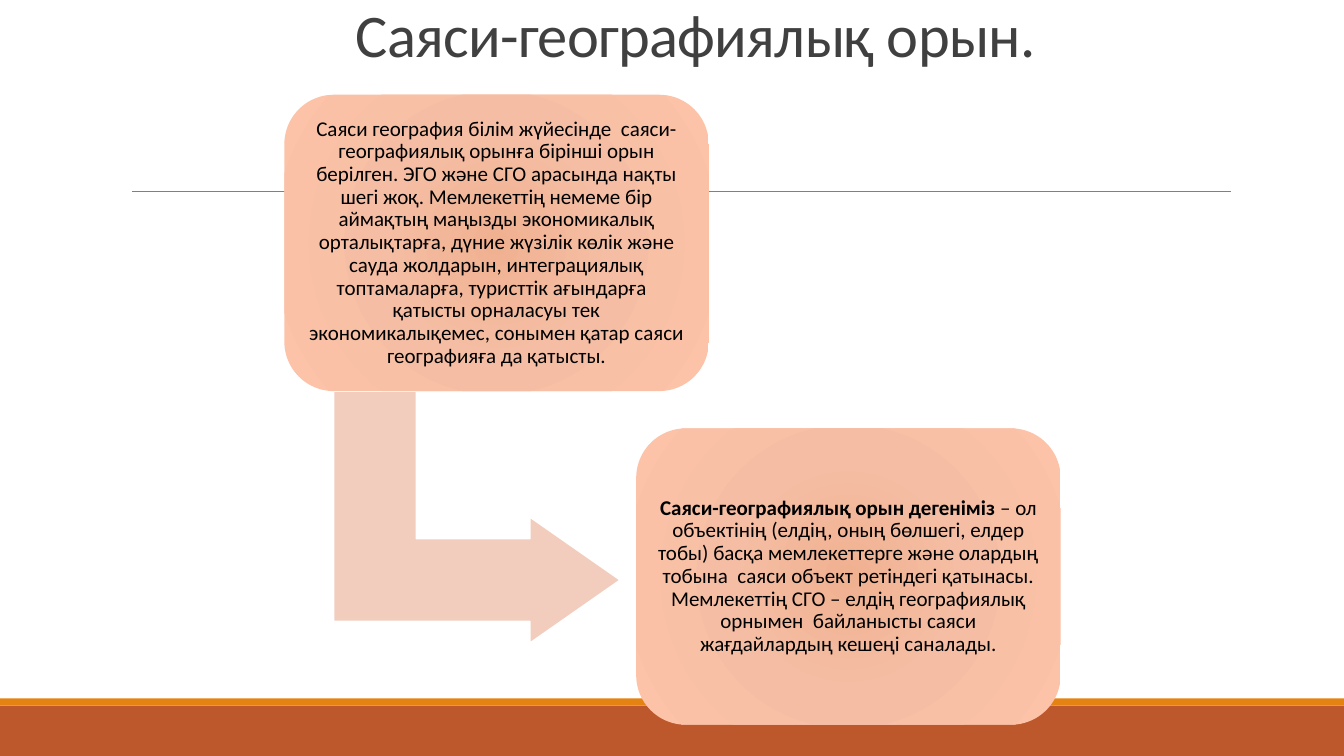
from pptx import Presentation
from pptx.dml.color import RGBColor
from pptx.enum.shapes import MSO_CONNECTOR, MSO_SHAPE
from pptx.enum.text import MSO_ANCHOR, PP_ALIGN
from pptx.oxml import parse_xml
from pptx.oxml.ns import nsdecls
from pptx.util import Inches, Pt

RECT, ROUNDED, BENT_ARROW = MSO_SHAPE.RECTANGLE, MSO_SHAPE.ROUNDED_RECTANGLE, MSO_SHAPE.BENT_UP_ARROW
STRAIGHT = MSO_CONNECTOR.STRAIGHT
CENTER, MIDDLE, BOTTOM = PP_ALIGN.CENTER, MSO_ANCHOR.MIDDLE, MSO_ANCHOR.BOTTOM

RUST = RGBColor(0xBD, 0x58, 0x2C)
ORANGE = RGBColor(0xE4, 0x83, 0x12)
GREY = RGBColor(0x80, 0x80, 0x80)
DARK = RGBColor(0x40, 0x40, 0x40)
PEACH = RGBColor(0xF2, 0xCD, 0xBD)
WHITE = RGBColor(0xFF, 0xFF, 0xFF)
BLACK = RGBColor(0x00, 0x00, 0x00)
CARD_STOPS = [(0, RGBColor(0xF0, 0xB1, 0x91)), (45, RGBColor(0xF5, 0xBE, 0xA4)),
              (100, RGBColor(0xFD, 0xC3, 0xA8))]

CARD_WIDTH, CARD_HEIGHT = 4.21, 2.94
CARDS = [
    (2.82, 0.94, [
        ("Саяси география білім жүйесінде  саяси-географиялық орынға бірінші орын берілген. "
         "ЭГО және СГО арасында нақты шегі жоқ. Мемлекеттің немеме бір аймақтың маңызды "
         "экономикалық орталықтарға, дүние жүзілік көлік және сауда жолдарын, интеграциялық "
         "топтамаларға, туристтік ағындарға   қатысты орналасуы тек экономикалықемес, "
         "сонымен қатар саяси географияға да қатысты.", False)]),
    (6.31, 4.25, [
        ("Саяси-географиялық орын дегеніміз ", True),
        ("– ол объектінің (елдің, оның бөлшегі, елдер тобы) басқа мемлекеттерге және олардың "
         "тобына  саяси объект ретіндегі қатынасы. Мемлекеттің СГО – елдің географиялық "
         "орнымен  байланысты саяси жағдайлардың кешеңі саналады.", False)]),
]


class SlideBuilder:
    """Holds the text style and the page being built."""

    font_name = "Calibri"

    def __init__(self, page):
        self.page = page

    def shape(self, kind, box, color, adjustments=()):
        shape = self.page.shapes.add_shape(kind, *map(Inches, box))
        shape.shadow.inherit = False
        shape.fill.solid()
        shape.fill.fore_color.rgb = color
        shape.line.fill.background()
        for index, value in enumerate(adjustments):
            shape.adjustments[index] = value
        return shape

    def rule(self, start, end, color, width):
        line = self.page.shapes.add_connector(STRAIGHT, *map(Inches, start + end))
        line.line.color.rgb = color
        line.line.width = Pt(width)
        line._element.spPr.append(parse_xml(f"<a:effectLst {nsdecls('a')}/>"))

    def add_text(self, shape, spans, size, color, frame_format, line_spacing, tracking=0):
        frame = shape.text_frame
        for name, value in {"word_wrap": True, **frame_format}.items():
            setattr(frame, name, value)
        para = frame.paragraphs[0]
        para.alignment = CENTER
        para.line_spacing = line_spacing
        for text, bold in spans:
            span = para.add_run()
            span.text = text
            font_format = {"name": self.font_name, "size": Pt(size), "bold": bold}
            for name, value in font_format.items():
                setattr(span.font, name, value)
            span.font.color.rgb = color
            if tracking:
                span._r.get_or_add_rPr().set("spc", str(int(tracking * 100)))

    def title(self, box, text):
        shape = self.page.shapes.add_textbox(*map(Inches, box))
        self.add_text(shape, [(text, False)], 43.2, DARK, {"vertical_anchor": BOTTOM}, 0.85, -0.5)

    def card(self, left, top, spans):
        shape = self.shape(ROUNDED, (left, top, CARD_WIDTH, CARD_HEIGHT), PEACH, [0.167])
        self.radial_fill(shape, CARD_STOPS)
        margins = {f"margin_{side}": Inches(0.06) for side in ("left", "top", "right", "bottom")}
        self.add_text(shape, spans, 15, BLACK, {"vertical_anchor": MIDDLE, **margins}, 0.9)

    def radial_fill(self, shape, stops):
        stop_xml = "".join(f'<a:gs pos="{position * 1000}"><a:srgbClr val="{color}"/></a:gs>'
                           for position, color in stops)
        gradient = parse_xml(
            f'<a:gradFill {nsdecls("a")} rotWithShape="1"><a:gsLst>{stop_xml}</a:gsLst>'
            '<a:path path="circle"><a:fillToRect l="100000" t="100000" r="100000" b="100000"/>'
            '</a:path></a:gradFill>')
        properties = shape._element.spPr
        properties.replace(properties.find("{*}solidFill"), gradient)


def main():
    deck = Presentation()
    deck.slide_width, deck.slide_height = Inches(13.33), Inches(7.5)
    builder = SlideBuilder(deck.slides.add_slide(deck.slide_layouts[6]))

    # Footer bands and rule
    builder.shape(RECT, (0, 7, 13.33, 0.5), RUST)
    builder.shape(RECT, (0, 6.93, 13.33, 0.07), ORANGE)
    builder.rule((1.31, 1.9), (12.21, 1.9), GREY, 0.5)

    # Title
    builder.title((2.65, 0.13, 8.5, 0.61), "Саяси-географиялық орын.")

    # Arrow from the first card to the second
    arrow = builder.shape(BENT_ARROW, (3.48, 3.71, 2.5, 2.84), PEACH, [0.328, 0.25, 0.358])
    arrow.rotation = 90
    arrow.line.color.rgb = WHITE
    arrow.line.width = Pt(1)

    # Cards
    for left, top, spans in CARDS:
        builder.card(left, top, spans)

    deck.save("out.pptx")


if __name__ == "__main__":
    main()
